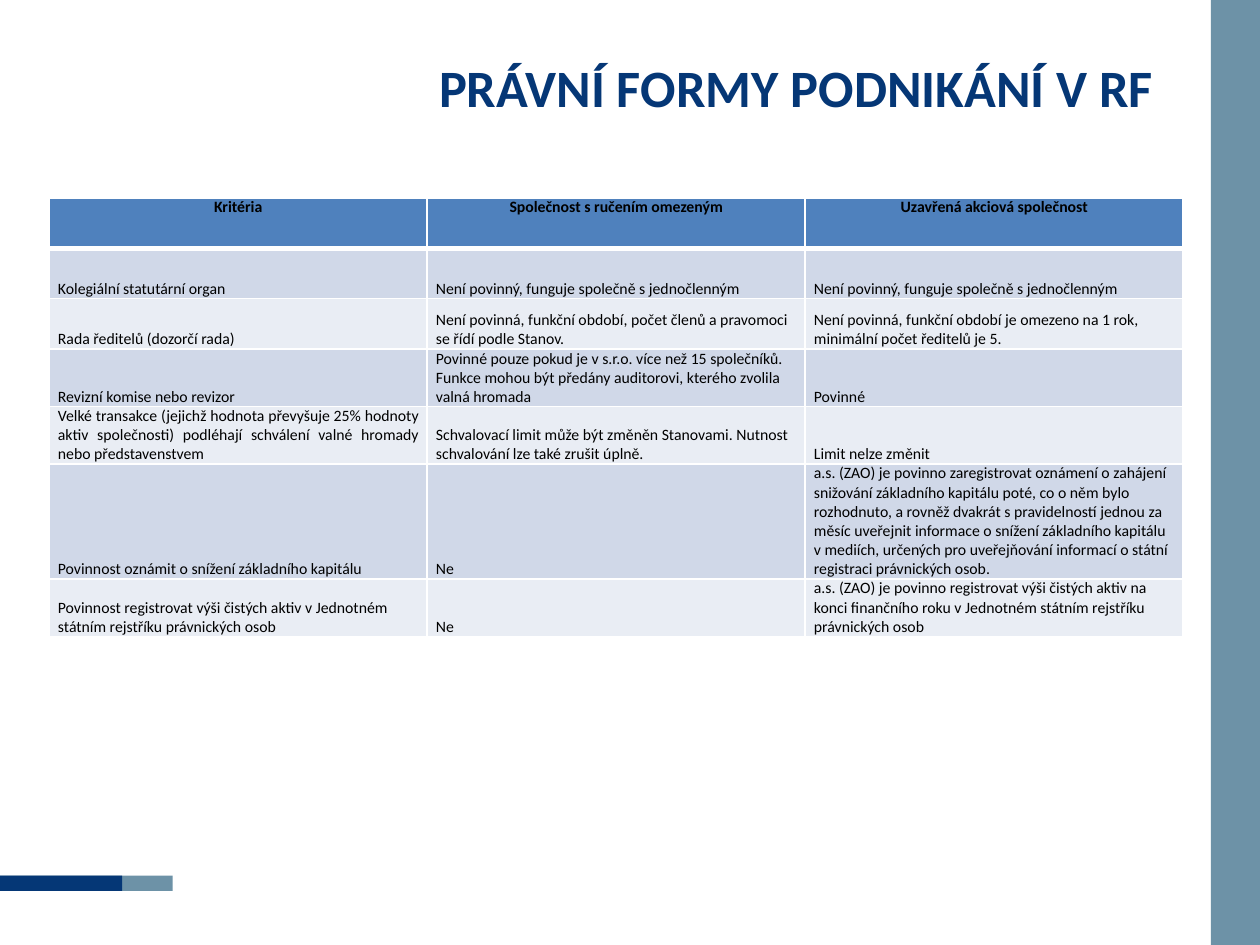
"""Build a slide with a table comparing legal forms of business in the RF."""
from lxml import etree
from pptx import Presentation
from pptx import util as u
from pptx.dml.color import RGBColor
from pptx.enum import shapes, text
from pptx.oxml import ns

NAVY, STEEL, WHITE, BLACK = "053776", "6D92A7", "FFFFFF", "000000"
HEADER, BANDS = "4F81BD", ("E9EDF4", "D0D8E8")
ROWS = [
    ("Kritéria", "Společnost s ručením omezeným", "Uzavřená akciová společnost"),
    ("Kolegiální statutární organ",
     "Není povinný, funguje společně s jednočlenným",
     "Není povinný, funguje společně s jednočlenným"),
    ("Rada ředitelů (dozorčí rada)",
     "Není povinná, funkční období, počet členů a pravomoci se řídí podle Stanov.",
     "Není povinná, funkční období je omezeno na 1 rok, minimální počet ředitelů je 5."),
    ("Revizní komise nebo revizor",
     "Povinné pouze pokud je v s.r.o. více než 15 společníků. Funkce mohou být "
     "předány auditorovi, kterého zvolila valná hromada",
     "Povinné"),
    ("Velké transakce (jejichž hodnota převyšuje 25% hodnoty aktiv společnosti) "
     "podléhají schválení valné hromady nebo představenstvem",
     "Schvalovací limit může být změněn Stanovami. Nutnost schvalování lze také "
     "zrušit úplně.",
     "Limit nelze změnit"),
    ("Povinnost oznámit o snížení základního kapitálu",
     "Ne",
     "a.s. (ZAO) je povinno zaregistrovat oznámení o zahájení snižování základního "
     "kapitálu poté, co o něm bylo rozhodnuto, a rovněž dvakrát s pravidelností "
     "jednou za měsíc uveřejnit informace o snížení základního kapitálu "
     "v mediích, určených pro uveřejňování informací o státní registraci "
     "právnických osob."),
    ("Povinnost registrovat výši čistých aktiv v Jednotném státním rejstříku "
     "právnických osob",
     "Ne",
     "a.s. (ZAO) je povinno registrovat výši čistých aktiv na konci finančního roku "
     "v Jednotném státním rejstříku právnických osob"),
]


def paint(fmt, color):
    fmt.solid()
    fmt.fore_color.rgb = RGBColor.from_string(color)


def style(p, size, color, bold, align):
    p.alignment = align
    for r in p.runs:
        r.font.name, r.font.size, r.font.bold = "Calibri", u.Pt(size), bold
        paint(r.font.fill, color)


prs = Presentation()
prs.slide_width, prs.slide_height = u.Inches(10), u.Inches(7.5)
s = prs.slides.add_slide(prs.slide_layouts[5])
paint(s.background.fill, WHITE)

bars = [(9.61, 0, 0.4, 7.5, STEEL), (-0.01, 6.95, 1.38, 0.12, STEEL),
        (-0.01, 6.95, 0.98, 0.12, NAVY)]
for *box, color in bars:
    sp = s.shapes.add_shape(shapes.MSO_SHAPE.RECTANGLE, *map(u.Inches, box))
    sp.shadow.inherit = False
    paint(sp.fill, color)
    sp.line.fill.background()

title = s.shapes.title
title.left, title.top, title.width, title.height = map(u.Inches, (3.03, 0.06, 6.58, 1.25))
tf = title.text_frame
tf.text = "PRÁVNÍ FORMY PODNIKÁNÍ V RF"
tf.vertical_anchor = text.MSO_ANCHOR.MIDDLE
style(tf.paragraphs[0], 30, NAVY, True, text.PP_ALIGN.CENTER)

row_h, col_w = 0.4, 3
table = s.shapes.add_table(
    len(ROWS), 3, u.Inches(0.39), u.Inches(1.57),
    u.Inches(3 * col_w), u.Inches(len(ROWS) * row_h)).table
for i, row in enumerate(ROWS):
    for j, words in enumerate(row):
        cell = table.cell(i, j)
        cell.text = words
        cell.margin_left = cell.margin_right = u.Inches(0.07)
        cell.margin_top = cell.margin_bottom = 0
        cell.vertical_anchor = text.MSO_ANCHOR.BOTTOM if i else text.MSO_ANCHOR.TOP
        align = text.PP_ALIGN.LEFT if i else text.PP_ALIGN.CENTER
        if (i, j) == (4, 0):
            align = text.PP_ALIGN.JUSTIFY
        style(cell.text_frame.paragraphs[0], 9, BLACK, i == 0, align)
        tc_pr = cell._tc.get_or_add_tcPr()
        for side in "LRTB":
            thick = (i, side) in ((0, "B"), (1, "T"))
            ln = etree.SubElement(tc_pr, ns.qn(f"a:ln{side}"), w=str(u.Pt(3 if thick else 1)))
            fill = etree.SubElement(ln, ns.qn("a:solidFill"))
            etree.SubElement(fill, ns.qn("a:srgbClr"), val=WHITE)
        paint(cell.fill, BANDS[i % 2] if i else HEADER)

prs.save("out.pptx")
